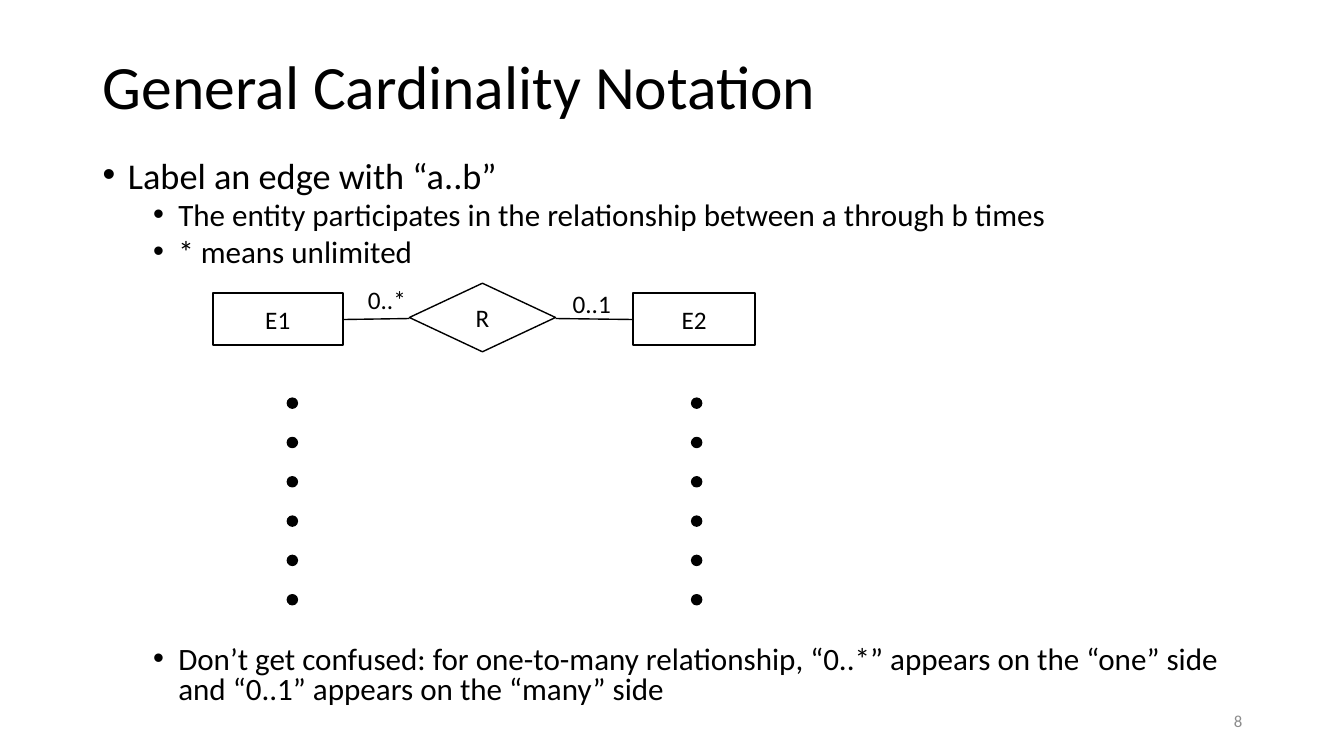
from lxml.etree import SubElement
from pptx import Presentation
from pptx.dml.color import RGBColor
from pptx.enum.shapes import MSO_CONNECTOR, MSO_SHAPE
from pptx.enum.text import MSO_ANCHOR, MSO_AUTO_SIZE, PP_ALIGN
from pptx.oxml.ns import qn
from pptx.util import Inches, Pt

BLACK = RGBColor(0, 0, 0)
WHITE = RGBColor(255, 255, 255)
GRAY = RGBColor(0x8C, 0x8C, 0x8C)
FONT = "Calibri"


def write(para, text, size=18, color=BLACK, align=PP_ALIGN.LEFT,
          line=None, before=0):
    """Put formatted text in a paragraph."""
    run = para.add_run()
    run.text = text
    run.font.name, run.font.size = FONT, Pt(size)
    run.font.color.rgb = color
    para.alignment = align
    para.space_before = Pt(before)
    if line:
        para.line_spacing = line


def bullet(para, left):
    """Give a paragraph a round bullet with a hanging indent."""
    props = para._p.get_or_add_pPr()
    props.set("marL", str(Inches(left)))
    props.set("indent", str(Inches(-0.25)))
    SubElement(props, qn("a:buFont"), typeface="Arial")
    SubElement(props, qn("a:buChar"), char="•")


class Deck:
    """Holds the slide and draws each kind of element on it."""

    def __init__(self, prs):
        """Add a title-only slide."""
        self.slide = prs.slides.add_slide(prs.slide_layouts[5])
        self.shapes = self.slide.shapes

    def title(self, text, x, y, w, h):
        """Place and fill the title."""
        head = self.shapes.title
        head.left, head.top = Inches(x), Inches(y)
        head.width, head.height = Inches(w), Inches(h)
        head.text_frame.vertical_anchor = MSO_ANCHOR.MIDDLE
        write(head.text_frame.paragraphs[0], text, size=44, line=0.9)

    def box(self, x, y, w, h, wrap=True, anchor=MSO_ANCHOR.TOP):
        """Add an empty text box and return its frame."""
        area = self.shapes.add_textbox(Inches(x), Inches(y),
                                       Inches(w), Inches(h))
        frame = area.text_frame
        frame.word_wrap, frame.vertical_anchor = wrap, anchor
        frame.auto_size = MSO_AUTO_SIZE.NONE if wrap else MSO_AUTO_SIZE.SHAPE_TO_FIT_TEXT
        return frame

    def points(self, items, x, y, w, h):
        """Add bullets given as text, level and space before."""
        frame = self.box(x, y, w, h)
        for i, (text, level, before) in enumerate(items):
            para = frame.add_paragraph() if i else frame.paragraphs[0]
            para.level = level
            write(para, text, size=(25.9, 22.2)[level], line=0.8, before=before)
            bullet(para, 0.25 + 0.5 * level)

    def label(self, text, x, y):
        """Add an edge label."""
        frame = self.box(x, y, 0.58, 0.4, wrap=False)
        write(frame.paragraphs[0], text)

    def node(self, kind, x, y, w, h, text="", fill=None, width=1):
        """Add an outlined shape with centred text."""
        item = self.shapes.add_shape(kind, Inches(x), Inches(y),
                                     Inches(w), Inches(h))
        item.shadow.inherit = False
        if fill is None:
            item.fill.background()
        else:
            item.fill.solid()
            item.fill.fore_color.rgb = fill
        item.line.color.rgb, item.line.width = BLACK, Pt(width)
        if text:
            item.text_frame.vertical_anchor = MSO_ANCHOR.MIDDLE
            write(item.text_frame.paragraphs[0], text, align=PP_ALIGN.CENTER)

    def edge(self, x1, y1, x2, y2):
        """Add a straight line."""
        link = self.shapes.add_connector(MSO_CONNECTOR.STRAIGHT, Inches(x1),
                                         Inches(y1), Inches(x2), Inches(y2))
        link.line.color.rgb, link.line.width = BLACK, Pt(1)
        SubElement(link._element.spPr, qn("a:effectLst"))


prs = Presentation()
prs.slide_width, prs.slide_height = Inches(13.33), Inches(7.5)
deck = Deck(prs)
deck.title("General Cardinality Notation", 0.92, 0.4, 11.5, 0.97)

# The last point stands below the dots
deck.points([
    ("Label an edge with “a..b”", 0, 10),
    ("The entity participates in the relationship between a through b times", 1, 5),
    ("* means unlimited", 1, 5),
    ("Don’t get confused: for one-to-many relationship, “0..*” appears on "
     "the “one” side and “0..1” appears on the “many” side", 1, 269),
], 0.92, 1.55, 11.5, 5.8)

# Members of both entity sets
for x in (2.85, 6.86):
    for row in range(6):
        deck.node(MSO_SHAPE.OVAL, x, 3.95 + 0.39 * row, 0.1, 0.1, fill=BLACK)

# Entities and their relationship
for name, x, w in (("E1", 2.11, 1.29), ("E2", 6.28, 1.21)):
    deck.node(MSO_SHAPE.RECTANGLE, x, 2.91, w, 0.51, name, width=1.5)
deck.node(MSO_SHAPE.DIAMOND, 4.06, 2.81, 1.45, 0.68, "R", fill=WHITE)
deck.edge(3.41, 3.17, 4.06, 3.16)
deck.edge(5.51, 3.16, 6.28, 3.17)
deck.label("0..*", 3.55, 2.77)
deck.label("0..1", 5.58, 2.81)

page = deck.box(9.42, 6.95, 3, 0.4, anchor=MSO_ANCHOR.MIDDLE)
write(page.paragraphs[0], "8", size=12, color=GRAY, align=PP_ALIGN.RIGHT)
prs.save("out.pptx")
